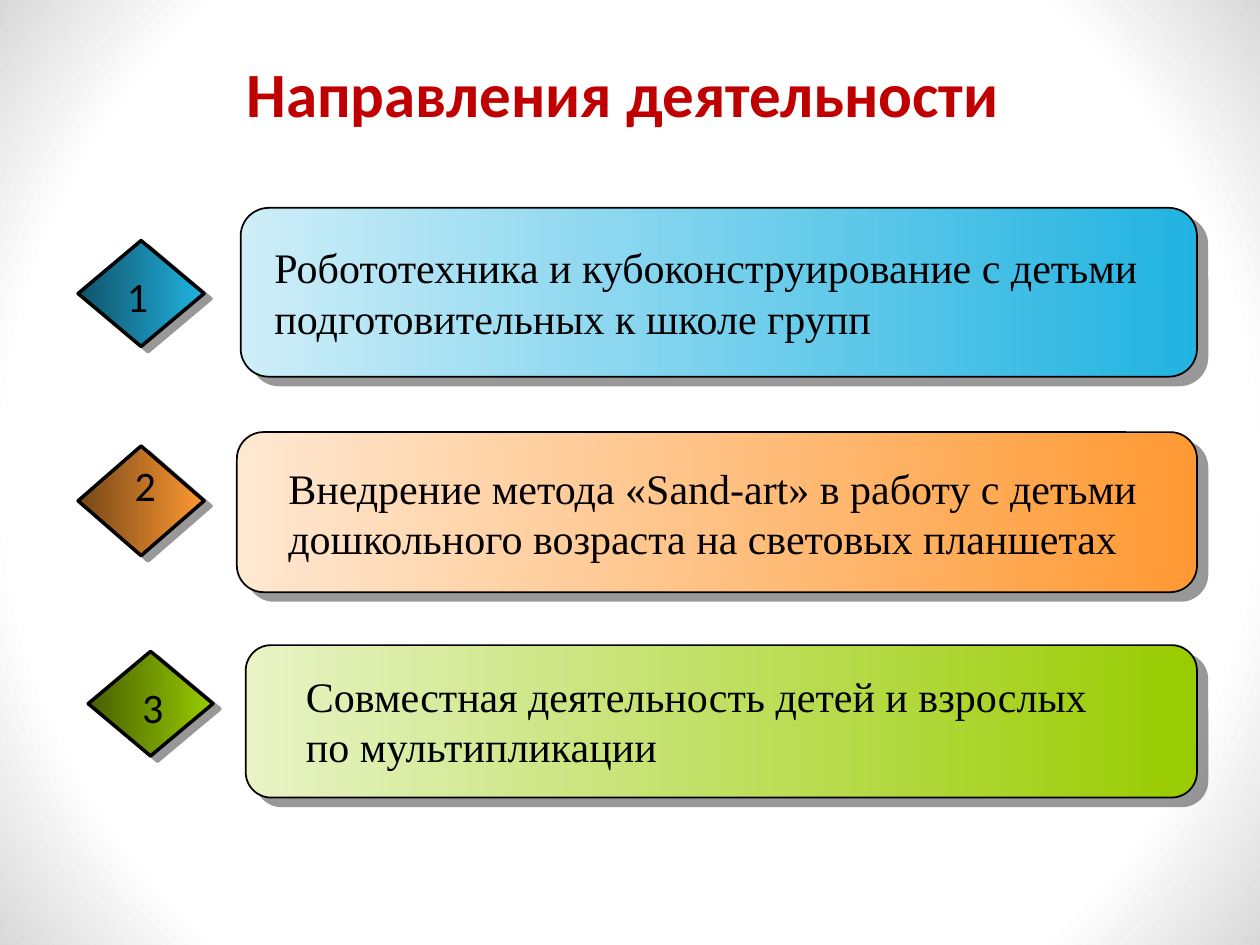
from lxml.etree import SubElement
from pptx import Presentation
from pptx.dml.color import RGBColor as RGB
from pptx.enum.shapes import MSO_SHAPE as SHAPE
from pptx.enum.text import MSO_ANCHOR as ANCHOR, PP_ALIGN as ALIGN
from pptx.oxml.ns import qn
from pptx.util import Inches, Pt

WHITE, BLACK = RGB(255, 255, 255), RGB(0, 0, 0)
EDGE_GREY = RGB(0xD9, 0xD9, 0xD9)
RED = RGB(0xC0, 0, 0)
BLUE = RGB(0x21, 0xB3, 0xE1)
ORANGE = RGB(0xFF, 0x99, 0x33)
GREEN = RGB(0x99, 0xCC, 0)
SHADOW = RGB(0x33, 0x33, 0x33)

COLS, ROWS = 100, 75
PANEL_RIGHT = 95
BODY = {"name": "Times New Roman", "size": Pt(24)}
NUMBER = {"name": "Calibri", "size": Pt(24)}
TITLE = {"name": "Calibri", "size": Pt(36), "bold": True}


def add(parent, tag, **attrs):
    return SubElement(parent, qn(tag), {k: str(v) for k, v in attrs.items()})


class Deck:
    """Keeps the presentation and its slide; places elements on the grid."""

    def __init__(self):
        self.prs = Presentation()
        self.prs.slide_width, self.prs.slide_height = Inches(10), Inches(7.5)
        self.s = self.prs.slides.add_slide(self.prs.slide_layouts[6])

    def place(self, box):
        col, row, width, height = box
        cw, rh = self.prs.slide_width / COLS, self.prs.slide_height / ROWS
        return [round(v) for v in (col * cw, row * rh, width * cw, height * rh)]

    def shape(self, kind, box, stops):
        sp = self.s.shapes.add_shape(kind, *self.place(box))
        sp.fill.gradient()
        for stop, (position, color) in zip(sp.fill.gradient_stops, stops):
            stop.position, stop.color.rgb = position, color
        sp.shadow.inherit = False
        return sp

    def backdrop(self):
        sp = self.shape(SHAPE.RECTANGLE, (0, 0, COLS, ROWS),
                        [(0.79, WHITE), (1, EDGE_GREY)])
        sp.line.fill.background()
        # Turn the linear gradient into a circular one around the centre
        grad = sp._element.spPr.find(qn("a:gradFill"))
        lin = grad.find(qn("a:lin"))
        circle = add(grad, "a:path", path="circle")
        add(circle, "a:fillToRect", l=50000, t=50000, r=50000, b=50000)
        grad.replace(lin, circle)

    def raised(self, kind, box, color, start, line, distance, angle):
        """Gradient shape with an outline and a hard shadow."""
        sp = self.shape(kind, box, [(0, color), (1, color)])
        sp.fill.gradient_angle = 0
        sp.line.color.rgb, sp.line.width = BLACK, Pt(line)
        spPr = sp._element.spPr
        tone, amount = start
        first = next(spPr.iter(qn("a:srgbClr")))
        add(first, "a:gamma")
        add(first, tone, val=amount)
        add(first, "a:invGamma")
        shadow = add(spPr.find(qn("a:effectLst")), "a:outerShdw", blurRad=0,
                     dist=Pt(distance), dir=angle * 60000, algn="ctr",
                     rotWithShape=0)
        add(add(shadow, "a:srgbClr", val=SHADOW), "a:alpha", val=50000)

    def panel(self, box, color):
        self.raised(SHAPE.ROUNDED_RECTANGLE, box, color, ("a:tint", 21961),
                    1, 7.8, 40)

    def diamond(self, box, color):
        self.raised(SHAPE.DIAMOND, box, color, ("a:shade", 46275), 2, 5, 37)

    def text(self, box, words, style, color=BLACK, align=ALIGN.LEFT,
             anchor=ANCHOR.TOP):
        tf = self.s.shapes.add_textbox(*self.place(box)).text_frame
        tf.word_wrap, tf.vertical_anchor = True, anchor
        p = tf.paragraphs[0]
        p.alignment = align
        r = p.add_run()
        r.text = words
        r.font.color.rgb = color
        for key, value in style.items():
            setattr(r.font, key, value)


# Each direction: colour, panel (left, top, height), diamond, number, text
DIRECTIONS = [
    (BLUE, (19.1, 16.5, 13.4), (6.2, 19.1, 10, 8.4), (9.1, 21, 4, 5),
     (20.8, 18.7, 74.2, 13.1),
     "Робототехника и кубоконструирование с детьми "
     "подготовительных к школе групп"),
    (ORANGE, (18.8, 34.3, 12.7), (6.2, 35.4, 10, 8.7), (9.7, 36, 4.5, 5),
     (21.9, 36.2, 70, 9.1),
     "Внедрение метода «Sand-art» в работу с детьми "
     "дошкольного возраста на световых планшетах"),
    (GREEN, (19.5, 51.2, 12.1), (7, 51.7, 9.9, 8.3), (10.3, 53.6, 6, 5),
     (23.3, 52.7, 66.2, 9.1),
     "Совместная деятельность детей и взрослых по мультипликации"),
]


def main():
    deck = Deck()
    deck.backdrop()
    # Title
    deck.text((5, 1.7, 90, 11.3), "Направления деятельности ", TITLE, RED,
              ALIGN.CENTER, ANCHOR.MIDDLE)
    # Numbered directions
    for i, (color, panel, diamond, number, box, words) in enumerate(DIRECTIONS, 1):
        left, top, height = panel
        deck.panel((left, top, PANEL_RIGHT - left, height), color)
        deck.diamond(diamond, color)
        deck.text(box, words, BODY)
        deck.text(number, str(i), NUMBER)
    deck.prs.save("out.pptx")


if __name__ == "__main__":
    main()
